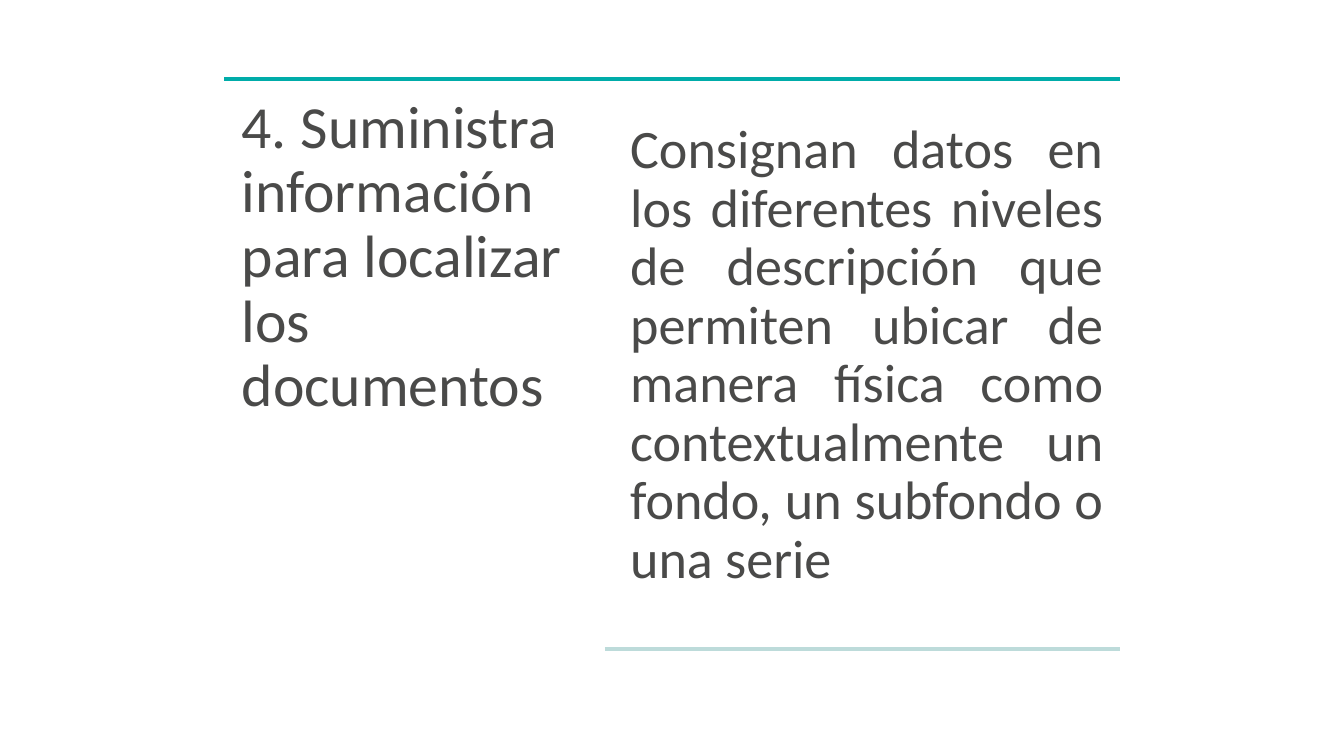
"""Build a slide with a numbered heading beside its explanation, framed by two rules."""
from dataclasses import dataclass

from lxml.etree import SubElement
from pptx import Presentation
from pptx.dml.color import RGBColor
from pptx.enum.shapes import MSO_CONNECTOR
from pptx.enum.text import MSO_ANCHOR, PP_ALIGN
from pptx.oxml.ns import qn
from pptx.slide import Slide
from pptx.util import Cm, Pt


@dataclass(frozen=True)
class Theme:
    font: str = "Calibri"
    ink: str = "4A4A49"
    strong_rule: str = "00ACA9"
    soft_rule: str = "BDDBDA"
    heading_size: int = 32
    body_size: int = 29
    rule_width: int = 2
    line_spacing: float = 0.9


@dataclass(frozen=True)
class TextBlock:
    text: str
    left: float
    top: float
    width: float
    height: float
    inset: float
    size: int
    alignment: PP_ALIGN


@dataclass(frozen=True)
class Rule:
    left: float
    right: float
    top: float
    color: str


THEME = Theme()
LEFT, RIGHT = 4.24, 21.16
TOP, BOTTOM = 1.5, 12.27
BODY_LEFT, BODY_TOP = 11.61, 2.01

BLOCKS = (
    TextBlock(
        "4. Suministra información para localizar los documentos",
        LEFT, TOP, 7.21, 11.28, 0.33, THEME.heading_size, PP_ALIGN.LEFT,
    ),
    TextBlock(
        "Consignan datos en los diferentes niveles de descripción que permiten "
        "ubicar de manera física como contextualmente un fondo, un subfondo o una serie",
        BODY_LEFT, BODY_TOP, RIGHT - BODY_LEFT, BOTTOM - BODY_TOP,
        0.3, THEME.body_size, PP_ALIGN.JUSTIFY,
    ),
)
RULES = (
    Rule(LEFT, RIGHT, TOP, THEME.strong_rule),
    Rule(11.43, RIGHT, BOTTOM, THEME.soft_rule),
)


def set_attributes(target: object, values: dict) -> None:
    for name, value in values.items():
        setattr(target, name, value)


def draw_rule(page: Slide, rule: Rule) -> None:
    line = page.shapes.add_connector(
        MSO_CONNECTOR.STRAIGHT,
        Cm(rule.left), Cm(rule.top), Cm(rule.right), Cm(rule.top),
    )
    line.line.color.rgb = RGBColor.from_string(rule.color)
    line.line.width = Pt(THEME.rule_width)
    SubElement(line._element.spPr, qn("a:effectLst"))


def draw_text(page: Slide, block: TextBlock) -> None:
    box = page.shapes.add_textbox(
        Cm(block.left), Cm(block.top), Cm(block.width), Cm(block.height)
    )
    sides = ("left", "top", "right", "bottom")
    set_attributes(box.text_frame, {
        "word_wrap": True,
        "vertical_anchor": MSO_ANCHOR.TOP,
        **{f"margin_{side}": Cm(block.inset) for side in sides},
    })
    para = box.text_frame.paragraphs[0]
    set_attributes(para, {
        "alignment": block.alignment,
        "line_spacing": THEME.line_spacing,
    })
    span = para.add_run()
    span.text = block.text
    set_attributes(span.font, {"name": THEME.font, "size": Pt(block.size)})
    span.font.color.rgb = RGBColor.from_string(THEME.ink)


def main() -> None:
    deck = Presentation()
    set_attributes(deck, {"slide_width": Cm(25.4), "slide_height": Cm(14.29)})
    page = deck.slides.add_slide(deck.slide_layouts[6])
    for rule in RULES:
        draw_rule(page, rule)
    for block in BLOCKS:
        draw_text(page, block)
    deck.save("out.pptx")


if __name__ == "__main__":
    main()
